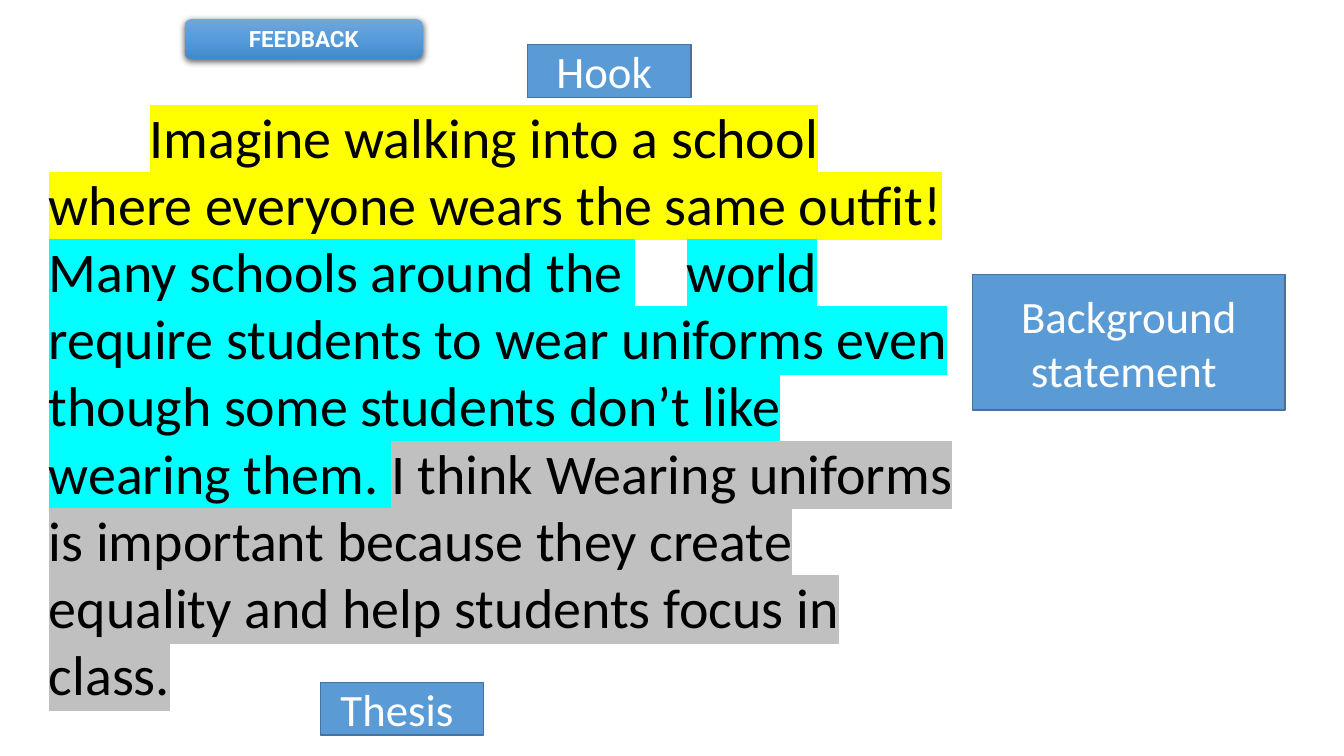
from copy import deepcopy

from lxml import etree
from pptx import Presentation
from pptx import util as u
from pptx.dml.color import RGBColor
from pptx.enum import shapes, text
from pptx.oxml import ns

BLACK = RGBColor(0x00, 0x00, 0x00)
WHITE = RGBColor(0xFF, 0xFF, 0xFF)
BLUE = RGBColor(0x5B, 0x9B, 0xD5)
EDGE = RGBColor(0x43, 0x73, 0x9E)
YELLOW = RGBColor(0xFF, 0xFF, 0x00)
CYAN = RGBColor(0x00, 0xFF, 0xFF)
GRAY = RGBColor(0xC0, 0xC0, 0xC0)
SHADES = (
    (0, RGBColor(0x71, 0xA6, 0xDB)),
    (0.5, RGBColor(0x55, 0x9B, 0xDB)),
    (1, RGBColor(0x44, 0x8A, 0xCA)),
)
ESSAY = (
    ("Imagine walking into a school where everyone wears the same outfit! ", YELLOW, 0),
    ("Many schools around the", CYAN, 0),
    (" ", CYAN, 36.5),
    ("world require students to wear uniforms even "
     "though some students don’t like wearing them. ", CYAN, 0),
    ("I think Wearing uniforms is important because they create equality "
     "and help students focus in class.", GRAY, 0),
)
LABELS = (
    ("Hook ", 377, 32, 116.5, 37.5),
    ("Background statement ", 694.8, 196, 223.2, 97),
    ("Thesis ", 229, 487.4, 116.5, 37.5),
)


def node(parent, tag, **attrs):
    return etree.SubElement(parent, ns.qn(tag), attrs)


class Page:
    face = "Calibri"

    def __init__(self, slide):
        self.slide = slide

    def style(self, para, size, color, face=None, bold=False):
        font = para.font
        font.name = face or self.face
        font.size = u.Pt(size)
        font.bold = bold
        font.color.rgb = color

    def essay(self, parts, x, y, w, h, indent):
        box = self.slide.shapes.add_textbox(u.Pt(x), u.Pt(y), u.Pt(w), u.Pt(h))
        frame = box.text_frame
        frame.word_wrap = True
        para = frame.paragraphs[0]
        self.style(para, 40, BLACK)
        props = para._p.get_or_add_pPr()
        props.set("marL", "0")
        props.set("indent", str(u.Pt(indent)))
        for words, color, gap in parts:
            run = para.add_run()
            run.text = words
            look = run._r.get_or_add_rPr()
            if gap:
                look.set("spc", str(int(gap * 100)))
            mark = node(look, "a:highlight")
            node(mark, "a:srgbClr", val=str(color))

    def block(self, kind, words, x, y, w, h, size, face=None, bold=False):
        shape = self.slide.shapes.add_shape(kind, u.Pt(x), u.Pt(y), u.Pt(w), u.Pt(h))
        shape.shadow.inherit = False
        frame = shape.text_frame
        frame.word_wrap = True
        frame.vertical_anchor = text.MSO_ANCHOR.MIDDLE
        para = frame.paragraphs[0]
        para.text = words
        para.alignment = text.PP_ALIGN.CENTER
        self.style(para, size, WHITE, face, bold)
        return shape

    def label(self, words, x, y, w, h):
        shape = self.block(shapes.MSO_SHAPE.RECTANGLE, words, x, y, w, h, 32)
        shape.fill.solid()
        shape.fill.fore_color.rgb = BLUE
        shape.line.color.rgb = EDGE
        shape.line.width = u.Pt(1)

    def button(self, words, x, y, w, h):
        shape = self.block(shapes.MSO_SHAPE.ROUNDED_RECTANGLE, words,
                           x, y, w, h, 16, "Roboto", True)
        shape.line.fill.background()
        fill = shape.fill
        fill.gradient()
        fill.gradient_angle = 270
        stops = shape._element.spPr.find(".//" + ns.qn("a:gsLst"))
        stops.append(deepcopy(stops[-1]))
        for stop, (place, color) in zip(fill.gradient_stops, SHADES):
            stop.position = place
            stop.color.rgb = color
        effects = shape._element.spPr.find(ns.qn("a:effectLst"))
        shade = node(effects, "a:outerShdw", blurRad=str(u.Pt(4.5)),
                     dist=str(u.Pt(1.5)), dir="5400000", algn="ctr", rotWithShape="0")
        color = node(shade, "a:srgbClr", val=str(BLACK))
        node(color, "a:alpha", val="63000")


def main():
    deck = Presentation()
    deck.slide_width = u.Pt(960)
    deck.slide_height = u.Pt(540)
    page = Page(deck.slides.add_slide(deck.slide_layouts[6]))
    page.essay(ESSAY, 27.8, 69.5, 666.5, 487.5, indent=72)
    page.button("FEEDBACK", 132, 13.7, 170, 28.3)
    for label in LABELS:
        page.label(*label)
    deck.save("out.pptx")


if __name__ == "__main__":
    main()
